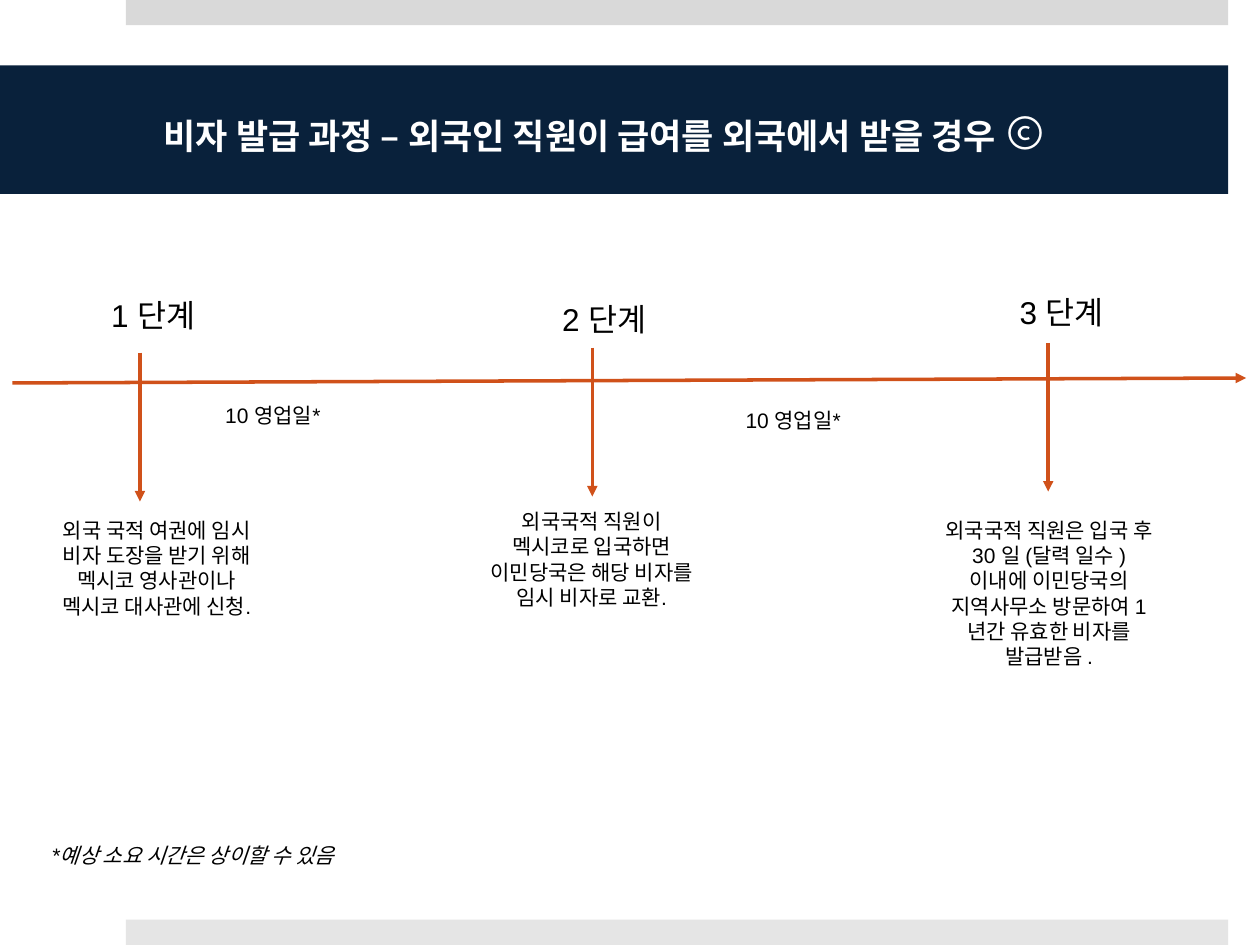
from typing import NamedTuple

from lxml import etree
from pptx import Presentation
from pptx import util as u
from pptx.dml.color import RGBColor
from pptx.enum import shapes, text
from pptx.oxml import ns

NAVY, RUST, BLACK, WHITE = "09213B", "D0511A", "000000", "FFFFFF"
LEFT, MID, RIGHT = text.PP_ALIGN.LEFT, text.PP_ALIGN.CENTER, text.PP_ALIGN.RIGHT
WIDE = 4.7  # width of body and wait texts


class Step(NamedTuple):
    label: str
    label_x: float
    label_y: float
    arrow_x: float
    arrow_y: float
    body: str
    body_x: float
    body_y: float
    body_h: float


class Wait(NamedTuple):
    x: float
    y: float


STEPS = [
    Step("1 단계", 1.45, 5.84, 2.82, 7.11,
         "외국 국적 여권에 임시 비자 도장을 받기 위해 멕시코 영사관이나 멕시코 대사관에 신청.",
         0.81, 10.31, 2.31),
    Step("2 단계", 10.54, 5.92, 11.94, 7.01,
         "외국국적 직원이 멕시코로 입국하면 이민당국은 해당 비자를 임시 비자로 교환.",
         9.58, 10.13, 2.82),
    Step("3 단계", 19.76, 5.79, 21.13, 6.91,
         "외국국적 직원은 입국 후 30 일 (달력 일수 ) 이내에 이민당국의 "
         "지역사무소 방문하여 1년간 유효한 비자를 발급받음 .",
         18.8, 10.31, 3.33),
]
WAITS = [Wait(3.15, 8), Wait(13.64, 8.1)]


def paint(fmt, color: str) -> None:
    """Give a fill a solid colour."""
    fmt.solid()
    fmt.fore_color.rgb = RGBColor.from_string(color)


def add_run(par, words: str, size: float, color: str = BLACK, face: str = "Arial",
            bold: bool = False, slant: bool = False) -> None:
    run = par.add_run()
    run.text = words
    font = run.font
    font.size, font.name, font.bold, font.italic = u.Pt(size), face, bold, slant
    paint(font.fill, color)


def add_bar(slide, x: float, y: float, w: float, h: float, color: str):
    bar = slide.shapes.add_shape(shapes.MSO_SHAPE.RECTANGLE,
                                 u.Cm(x), u.Cm(y), u.Cm(w), u.Cm(h))
    bar.shadow.inherit = False
    paint(bar.fill, color)
    bar.line.fill.background()
    return bar


def add_arrow(slide, x1: float, y1: float, x2: float, y2: float) -> None:
    line = slide.shapes.add_connector(shapes.MSO_CONNECTOR.STRAIGHT,
                                      u.Cm(x1), u.Cm(y1), u.Cm(x2), u.Cm(y2))
    line.line.width = u.Pt(2)
    paint(line.line.fill, RUST)
    etree.SubElement(line.line._get_or_add_ln(), ns.qn("a:tailEnd"), type="triangle")
    etree.SubElement(line._element.spPr, ns.qn("a:effectLst"))


def add_text(slide, words: str, x: float, y: float, w: float, h: float,
             size: float = 12, align=MID, slant: bool = False) -> None:
    box = slide.shapes.add_textbox(u.Cm(x), u.Cm(y), u.Cm(w), u.Cm(h))
    frame = box.text_frame
    frame.word_wrap = True
    frame.auto_size = text.MSO_AUTO_SIZE.SHAPE_TO_FIT_TEXT
    par = frame.paragraphs[0]
    par.alignment = align
    add_run(par, words, size, slant=slant)


def add_title(slide) -> None:
    bar = add_bar(slide, 0, 1.32, 24.76, 2.59, NAVY)
    frame = bar.text_frame
    frame.word_wrap = True
    frame.vertical_anchor = text.MSO_ANCHOR.MIDDLE
    frame.margin_left, frame.margin_right = u.Cm(3.3), u.Cm(0.76)
    frame.margin_top = frame.margin_bottom = u.Cm(0.13)
    par = frame.paragraphs[0]
    par.alignment = LEFT
    face = "League Spartan"
    add_run(par, "비자 발급 과정 – 외국인 직원이 급여를 외국에서 받을 경우", 20, WHITE, face, bold=True)
    add_run(par, " ©", 28, WHITE, face)


def main() -> None:
    deck = Presentation()
    deck.slide_width, deck.slide_height = u.Cm(25.4), u.Cm(19.05)
    slide = deck.slides.add_slide(deck.slide_layouts[6])

    # Edge bars and title
    add_bar(slide, 2.54, 0, 22.22, 0.51, "D9D9D9")
    add_bar(slide, 2.54, 18.54, 22.22, 0.51, "E5E5E5")
    add_title(slide)

    # Timeline with its steps
    add_arrow(slide, 0.25, 7.72, 25.12, 7.62)
    for s in STEPS:
        add_text(slide, s.label, s.label_x, s.label_y, 2.74, 1.02, 18, RIGHT)
        add_arrow(slide, s.arrow_x, s.arrow_y, s.arrow_x, s.arrow_y + 3)
        add_text(slide, s.body, s.body_x, s.body_y, WIDE, s.body_h)

    # Waiting times and footnote
    for w in WAITS:
        add_text(slide, "10 영업일*", w.x, w.y, WIDE, 0.76)
    add_text(slide, "*예상 소요 시간은 상이할 수 있음", 0.79, 16.87, 19.33, 0.76,
             align=LEFT, slant=True)

    deck.save("out.pptx")


if __name__ == "__main__":
    main()
